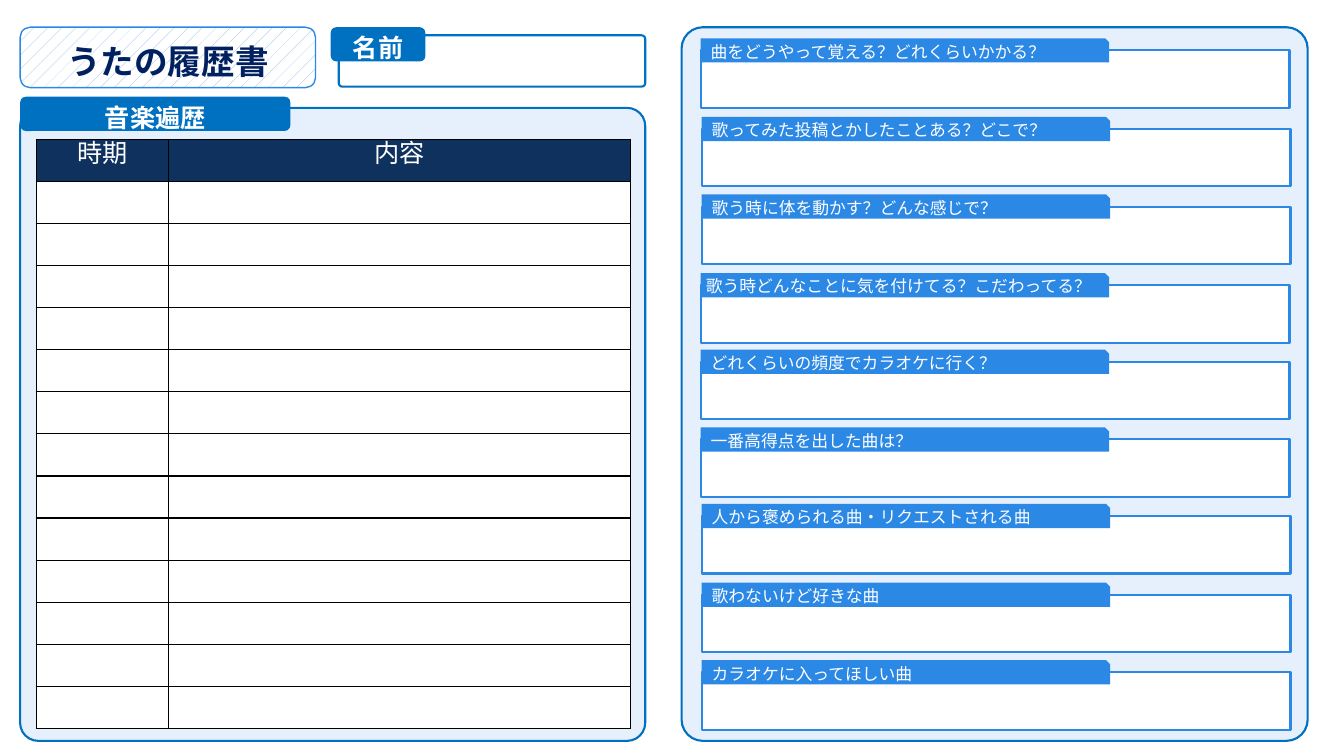
from dataclasses import dataclass

from lxml import etree
from pptx import Presentation
from pptx.dml.color import RGBColor
from pptx.enum.dml import MSO_PATTERN
from pptx.enum.shapes import MSO_SHAPE
from pptx.enum.text import MSO_ANCHOR, PP_ALIGN
from pptx.oxml.ns import qn
from pptx.util import Inches, Pt

ROUND = MSO_SHAPE.ROUNDED_RECTANGLE
RECT = MSO_SHAPE.RECTANGLE
SNIP = MSO_SHAPE.SNIP_1_RECTANGLE
DOTS = MSO_PATTERN.PERCENT_5
MIDDLE = MSO_ANCHOR.MIDDLE
CENTER = PP_ALIGN.CENTER
LEFT = PP_ALIGN.LEFT

WHITE = RGBColor(0xFF, 0xFF, 0xFF)
NAVY = RGBColor(0x00, 0x20, 0x60)
HEAD = RGBColor(0x0F, 0x31, 0x5E)
BLUE = RGBColor(0x00, 0x70, 0xC0)
SKY = RGBColor(0x2C, 0x88, 0xE5)
PALE = RGBColor(0xE5, 0xF0, 0xFC)
HATCH = RGBColor(0x7D, 0xB6, 0xEF)
FONT = "TeX Gyre Adventor"


@dataclass
class Box:
    left: float
    top: float
    width: float
    height: float
    kind: int = ROUND
    fill: RGBColor | None = WHITE
    line: RGBColor | None = None
    weight: float = 1.5
    bend: float | None = None


@dataclass
class Label:
    text: str
    size: float
    color: RGBColor = WHITE
    bold: bool = False
    align: int = CENTER
    side: float = 0.1
    top: float = 0.05


@dataclass
class Ask:
    text: str
    left: float
    top: float
    side: float = 0.1


def style(frame, label: Label) -> None:
    frame.text = label.text
    para = frame.paragraphs[0]
    para.alignment = label.align
    for run in para.runs:
        run.font.size = Pt(label.size)
        run.font.bold = label.bold
        run.font.color.rgb = label.color
        run.font.name = FONT
        # East Asian text takes its own typeface
        east = etree.SubElement(run._r.get_or_add_rPr(), qn("a:ea"))
        east.set("typeface", FONT)


def draw(slide, box: Box, label: Label | None = None):
    shape = slide.shapes.add_shape(
        box.kind, Inches(box.left), Inches(box.top), Inches(box.width), Inches(box.height))
    shape.shadow.inherit = False
    if box.bend is not None:
        shape.adjustments[0] = box.bend
    if box.fill is not None:
        shape.fill.solid()
        shape.fill.fore_color.rgb = box.fill
    if box.line is None:
        shape.line.fill.background()
    else:
        shape.line.color.rgb = box.line
        shape.line.width = Pt(box.weight)
    if label:
        frame = shape.text_frame
        frame.word_wrap = True
        frame.vertical_anchor = MIDDLE
        frame.margin_left = frame.margin_right = Inches(label.side)
        frame.margin_top = Inches(label.top)
        frame.margin_bottom = Inches(0.05)
        style(frame, label)
    return shape


def border(cell) -> None:
    props = cell._tc.get_or_add_tcPr()
    for spot, side in enumerate(("a:lnL", "a:lnR", "a:lnT", "a:lnB")):
        line = etree.Element(qn(side), w=str(Pt(1)))
        fill = etree.SubElement(line, qn("a:solidFill"))
        etree.SubElement(fill, qn("a:srgbClr"), val="000000")
        props.insert(spot, line)


def add_log(slide, heads: list[str], widths: list[float], count: int) -> None:
    high = Inches(5.85)
    table = slide.shapes.add_table(
        count, len(heads), Inches(0.36), Inches(1.38), Inches(sum(widths)), high).table
    table.first_row = table.horz_banding = False
    for col, width in zip(table.columns, widths):
        col.width = Inches(width)
    for num, row in enumerate(table.rows):
        row.height = high // count
        for cell, head in zip(row.cells, heads):
            cell.fill.solid()
            cell.fill.fore_color.rgb = WHITE if num else HEAD
            border(cell)
            if num == 0:
                style(cell.text_frame, Label(head, 18))


def add_ask(slide, ask: Ask) -> None:
    draw(slide, Box(ask.left, ask.top, 5.84, 0.57, RECT, WHITE, SKY))
    draw(slide, Box(ask.left, ask.top - 0.12, 4.05, 0.24, SNIP, SKY),
         Label(ask.text, 12, align=LEFT, side=ask.side))


ASKS = [
    Ask("曲をどうやって覚える？どれくらいかかる？", 6.95, 0.5),
    Ask("歌ってみた投稿とかしたことある？どこで？", 6.96, 1.28),
    Ask("歌う時に体を動かす？どんな感じで？", 6.96, 2.05),
    Ask("歌う時どんなことに気を付けてる？こだわってる？", 6.95, 2.83, 0.05),
    Ask("どれくらいの頻度でカラオケに行く？", 6.95, 3.59),
    Ask("一番高得点を出した曲は？", 6.95, 4.36),
    Ask("人から褒められる曲・リクエストされる曲", 6.96, 5.12),
    Ask("歌わないけど好きな曲", 6.96, 5.9),
    Ask("カラオケに入ってほしい曲", 6.96, 6.67),
]


def main() -> None:
    deck = Presentation()
    deck.slide_width, deck.slide_height = Inches(13.33), Inches(7.5)
    slide = deck.slides.add_slide(deck.slide_layouts[6])

    # Title
    title = draw(slide, Box(0.2, 0.27, 2.93, 0.6, fill=None, line=SKY, weight=1),
                 Label("うたの履歴書", 24, NAVY, True, top=0.12))
    title.fill.patterned()
    title.fill.pattern = DOTS
    title.fill.fore_color.rgb = HATCH
    title.fill.back_color.rgb = WHITE

    # Name field
    draw(slide, Box(3.36, 0.35, 3.04, 0.51, line=BLUE, bend=0.072))
    draw(slide, Box(3.28, 0.27, 0.94, 0.34, fill=BLUE),
         Label("名前", 18, bold=True, top=0.12))

    # Music history
    draw(slide, Box(0.2, 1.07, 6.2, 6.28, fill=PALE, line=BLUE, bend=0.029))
    draw(slide, Box(0.2, 0.96, 2.68, 0.34, fill=BLUE),
         Label("音楽遍歴", 18, bold=True, top=0.12))
    add_log(slide, ["時期", "内容"], [1.31, 4.58], 14)

    # Questions
    draw(slide, Box(6.76, 0.27, 6.21, 7.08, fill=PALE, line=BLUE, bend=0.034))
    for ask in ASKS:
        add_ask(slide, ask)

    deck.save("out.pptx")


if __name__ == "__main__":
    main()
